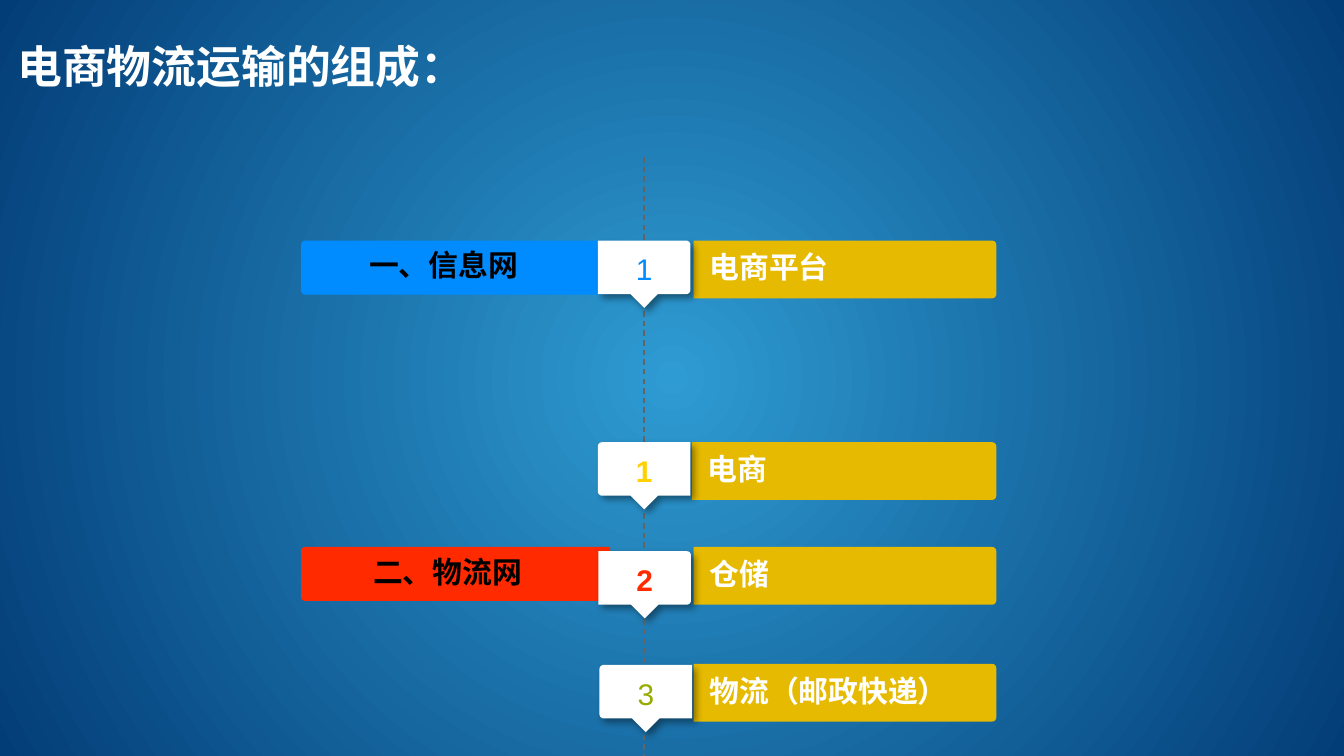
"""Build a slide on the parts of e-commerce logistics transport."""
from math import cos, pi, sin

from lxml.etree import SubElement
from pptx import Presentation
from pptx.dml.color import RGBColor
from pptx.enum.dml import MSO_LINE
from pptx.enum.shapes import MSO_CONNECTOR
from pptx.enum.text import MSO_ANCHOR, PP_ALIGN
from pptx.oxml.ns import qn
from pptx.util import Cm, Pt

WHITE = RGBColor(0xFF, 0xFF, 0xFF)
BLACK = RGBColor(0x00, 0x00, 0x00)
GOLD = RGBColor(0xE6, 0xBA, 0x00)
YELLOW = RGBColor(0xFF, 0xD1, 0x00)
GREEN = RGBColor(0x98, 0xAC, 0x00)
BLUE = RGBColor(0x00, 0x8C, 0xFF)
RED = RGBColor(0xFF, 0x2A, 0x00)
GREY = RGBColor(0x64, 0x64, 0x64)
SKY = RGBColor(0x2E, 0x9B, 0xD2)
NAVY = RGBColor(0x03, 0x3D, 0x77)

TITLE = "电商物流运输的组成："
LATIN, CHINESE = "Arial", "Noto Sans CJK SC"
LABELS = [
    ("一、信息网", 4.55, 5.69, BLUE),
    ("二、物流网", 10.34, 5.84, RED),
]
BARS = [
    ("电商平台", 13.11, 4.55),
    ("电商", 13.08, 8.36),
    ("仓储", 13.11, 10.34),
    ("物流（邮政快递）", 13.11, 12.55),
]
TAGS = [
    ("1", 11.3, 4.55, BLUE, False, "right"),
    ("1", 11.3, 8.36, YELLOW, True, "left"),
    ("2", 11.31, 10.42, RED, True, "right"),
    ("3", 11.33, 12.57, GREEN, False, "left"),
]
LABEL_LEFT, LABEL_HEIGHT = 5.69, 1.02
BAR_RIGHT, BAR_HEIGHT = 18.83, 1.09
TAG_WIDTH, TAG_HEIGHT, POINTER = 1.75, 1.01, 0.26
AXIS_X, AXIS_TOP, AXIS_BOTTOM = 12.17, 2.97, 14.66
RADIUS = 0.08


def corner(x, y, start):
    """Return the points of a quarter circle that begins at an angle in degrees."""
    angles = [(start + step * 15) * pi / 180 for step in range(7)]
    return [(x + RADIUS * cos(angle), y + RADIUS * sin(angle)) for angle in angles]


def outline(left, top, width, height, rounded, pointer=0):
    """Return a box outline, rounded on one side, with an optional pointer below."""
    right, bottom, middle = left + width, top + height, left + width / 2
    tip = [(middle + pointer, bottom), (middle, bottom + pointer), (middle - pointer, bottom)]
    tip = tip if pointer else []
    if rounded == "right":
        return ([(left, top)] + corner(right - RADIUS, top + RADIUS, 270)
                + corner(right - RADIUS, bottom - RADIUS, 0) + tip + [(left, bottom)])
    return ([(right, top), (right, bottom)] + tip
            + corner(left + RADIUS, bottom - RADIUS, 90)
            + corner(left + RADIUS, top + RADIUS, 180))


def write(shape, text, size, font, color, bold, align, margins):
    """Put one formatted paragraph into a shape."""
    frame = shape.text_frame
    frame.word_wrap = True
    frame.vertical_anchor = MSO_ANCHOR.MIDDLE
    frame.margin_left, frame.margin_top, frame.margin_right, frame.margin_bottom = map(Cm, margins)
    para = frame.paragraphs[0]
    para.text = text
    para.alignment = align
    para.font.name = font
    para.font.size = Pt(size)
    para.font.bold = bold
    para.font.color.rgb = color


def add_block(page, points, fill):
    """Draw a closed, filled outline without a line."""
    points = [(Cm(x), Cm(y)) for x, y in points]
    builder = page.shapes.build_freeform(*points[0])
    builder.add_line_segments(points[1:], close=True)
    block = builder.convert_to_shape()
    block.shadow.inherit = False
    block.fill.solid()
    block.fill.fore_color.rgb = fill
    block.line.fill.background()
    return block


def add_label(page, text, top, width, fill):
    """Draw a group name on the left."""
    block = add_block(page, outline(LABEL_LEFT, top, width, LABEL_HEIGHT, "left"), fill)
    write(block, text, 16, LATIN, BLACK, True, PP_ALIGN.CENTER, (0, 0, 0.3, 0.1))


def add_bar(page, text, left, top):
    """Draw a gold item bar on the right."""
    block = add_block(page, outline(left, top, BAR_RIGHT - left, BAR_HEIGHT, "right"), GOLD)
    write(block, text, 16, CHINESE, WHITE, True, PP_ALIGN.LEFT, (0.3, 0, 0, 0.1))


def add_tag(page, text, left, top, color, bold, rounded):
    """Draw a white number tag with a pointer and a soft shadow."""
    block = add_block(page, outline(left, top, TAG_WIDTH, TAG_HEIGHT, rounded, POINTER), WHITE)
    write(block, text, 16, LATIN, color, bold, PP_ALIGN.CENTER, (0, 0, 0, 0.2))
    effects = block._element.spPr.find(qn("a:effectLst"))
    shadow = SubElement(effects, qn("a:outerShdw"), blurRad=str(Pt(4)), dist=str(Pt(3)),
                        dir="2700000", algn="tl", rotWithShape="0")
    black = SubElement(shadow, qn("a:srgbClr"), val="000000")
    SubElement(black, qn("a:alpha"), val="40000")


def add_axis(page):
    """Draw the dashed vertical arrow."""
    axis = page.shapes.add_connector(MSO_CONNECTOR.STRAIGHT, Cm(AXIS_X), Cm(AXIS_TOP),
                                     Cm(AXIS_X), Cm(AXIS_BOTTOM))
    axis.line.color.rgb = GREY
    axis.line.width = Pt(0.75)
    axis.line.dash_style = MSO_LINE.DASH
    SubElement(axis.line._get_or_add_ln(), qn("a:tailEnd"), type="triangle")
    SubElement(axis._element.spPr, qn("a:effectLst"))


def paint_background(page):
    """Fill the page with a circular gradient from its centre."""
    fill = page.background.fill
    fill.gradient()
    for stop, color, position in zip(fill.gradient_stops, (SKY, NAVY), (0, 1)):
        stop.color.rgb = color
        stop.position = position
    gradient = page._element.find(".//" + qn("a:gradFill"))
    gradient.remove(gradient.find(qn("a:lin")))
    circle = SubElement(gradient, qn("a:path"), path="circle")
    SubElement(circle, qn("a:fillToRect"), l="50000", t="50000", r="50000", b="50000")


def main():
    """Build and save the deck."""
    deck = Presentation()
    deck.slide_width, deck.slide_height = Cm(25.4), Cm(14.29)
    page = deck.slides.add_slide(deck.slide_layouts[6])
    paint_background(page)
    title = page.shapes.add_textbox(Cm(0.08), Cm(0.15), Cm(23.6), Cm(2.18))
    write(title, TITLE, 24, LATIN, WHITE, True, PP_ALIGN.LEFT, (0.25, 0.13, 0.25, 0.13))
    add_axis(page)
    for label in LABELS:
        add_label(page, *label)
    for bar in BARS:
        add_bar(page, *bar)
    for tag in TAGS:
        add_tag(page, *tag)
    deck.save("out.pptx")


if __name__ == "__main__":
    main()
